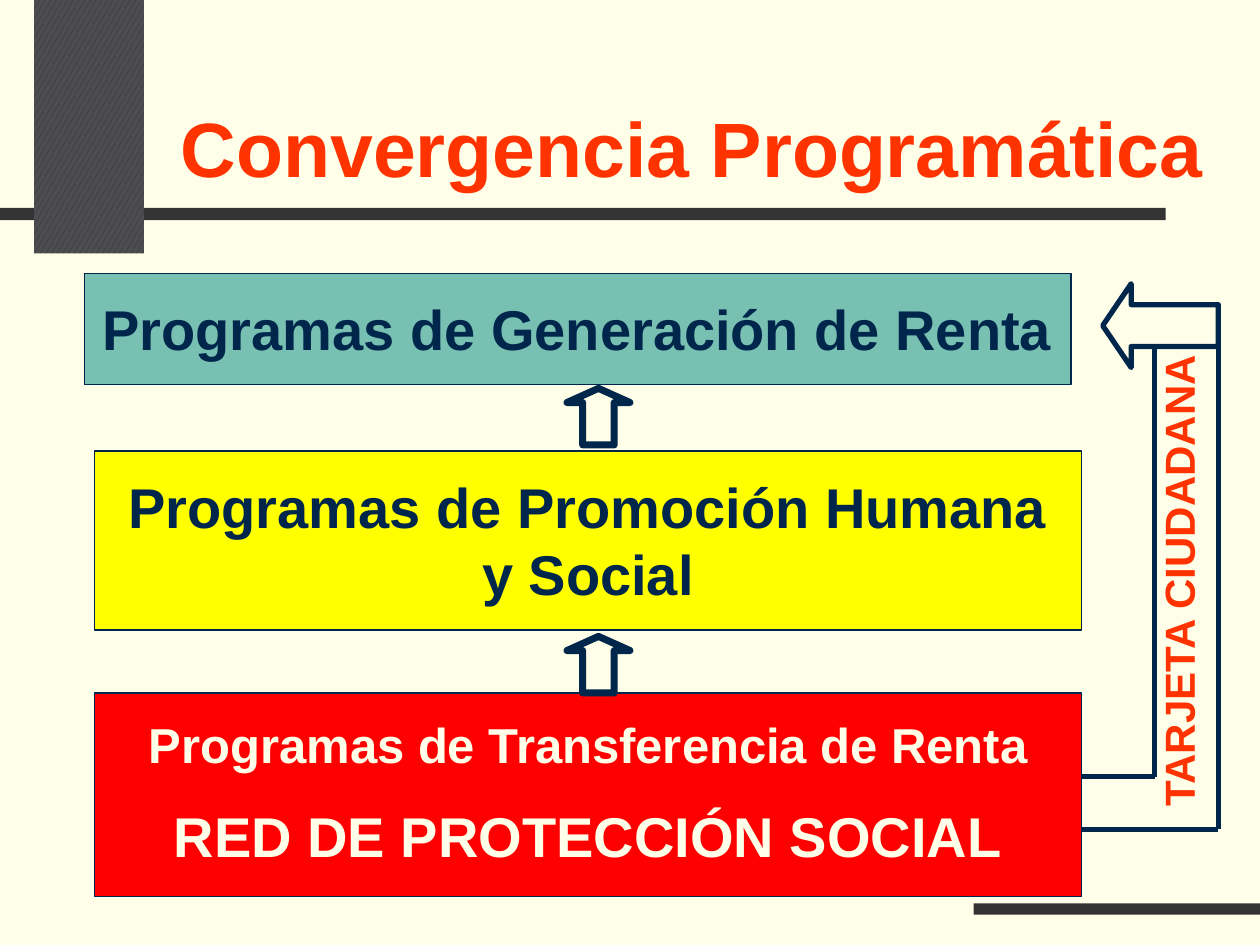
import pptx
import pptx.util
import pptx.dml.color
import pptx.enum.dml
import pptx.enum.shapes
import pptx.enum.text
import pptx.oxml

Cm = pptx.util.Cm
Pt = pptx.util.Pt
RGBColor = pptx.dml.color.RGBColor
SHAPE = pptx.enum.shapes.MSO_SHAPE
ANCHOR = pptx.enum.text.MSO_ANCHOR
CENTER = pptx.enum.text.PP_ALIGN.CENTER
LEFT = pptx.enum.text.PP_ALIGN.LEFT

CREAM = RGBColor(0xFF, 0xFF, 0xE9)
CHARCOAL = RGBColor(0x33, 0x33, 0x33)
GRAY = RGBColor(0x4D, 0x4D, 0x4D)
SLATE = RGBColor(0x26, 0x2D, 0x4C)
NAVY = RGBColor(0x00, 0x26, 0x4C)
ORANGE = RGBColor(0xFF, 0x33, 0x00)
TEAL = RGBColor(0x78, 0xC0, 0xB2)
YELLOW = RGBColor(0xFF, 0xFF, 0x00)
RED = RGBColor(0xFF, 0x00, 0x00)


class ProgramSlide:
    font_name = "Arial"

    def __init__(self, deck):
        self.slide = deck.slides.add_slide(deck.slide_layouts[5])
        self.shapes = self.slide.shapes
        background = self.slide.background.fill
        background.solid()
        background.fore_color.rgb = CREAM

    def set_lines(self, frame, lines, color, align=CENTER, anchor=ANCHOR.TOP):
        """Fill the frame with (text, size) lines, each one a paragraph."""
        frame.word_wrap = True
        frame.auto_size = pptx.enum.text.MSO_AUTO_SIZE.NONE
        frame.vertical_anchor = anchor
        for number, (text, size) in enumerate(lines):
            paragraph = frame.add_paragraph() if number else frame.paragraphs[0]
            paragraph.alignment = align
            if number:
                paragraph.space_before = Pt(size / 2)
            run = paragraph.add_run()
            run.text = text
            style = {"name": self.font_name, "size": Pt(size), "bold": True}
            for name, value in style.items():
                setattr(run.font, name, value)
            run.font.color.rgb = color

    def title(self, text, left, top, width, height):
        heading = self.shapes.title
        place = {"left": left, "top": top, "width": width, "height": height}
        for name, value in place.items():
            setattr(heading, name, Cm(value))
        self.set_lines(heading.text_frame, [(text, 44)], ORANGE,
                       anchor=ANCHOR.BOTTOM)

    def shape(self, kind, place, fill=None, line_width=0):
        shape = self.shapes.add_shape(kind, *map(Cm, place))
        shape.shadow.inherit = False
        if fill is None:
            shape.fill.background()
        else:
            shape.fill.solid()
            shape.fill.fore_color.rgb = fill
        if line_width:
            shape.line.color.rgb = NAVY
            shape.line.width = Pt(line_width)
        else:
            shape.line.fill.background()
        return shape

    def confetti_block(self, *place):
        fill = self.shape(SHAPE.RECTANGLE, place).fill
        fill.patterned()
        fill.pattern = pptx.enum.dml.MSO_PATTERN.LARGE_CONFETTI
        fill.fore_color.rgb = SLATE
        fill.back_color.rgb = GRAY

    def program(self, place, fill, color, lines):
        frame = self.shape(SHAPE.RECTANGLE, place, fill, 0.75).text_frame
        margins = {"margin_left": 0.36, "margin_right": 0.36,
                   "margin_top": 0.43, "margin_bottom": 0.43}
        for name, value in margins.items():
            setattr(frame, name, Cm(value))
        self.set_lines(frame, lines, color)

    def arrow(self, kind, place, line_width, head):
        arrow = self.shape(kind, place, line_width=line_width)
        arrow.adjustments[0] = 0.5
        arrow.adjustments[1] = head

    def line(self, *ends):
        line = self.shapes.add_connector(
            pptx.enum.shapes.MSO_CONNECTOR.STRAIGHT, *map(Cm, ends))
        line.line.color.rgb = NAVY
        line.line.width = Pt(3)
        properties = line._element.spPr
        properties.append(pptx.oxml.parse_xml(
            '<a:effectLst xmlns:a="http://schemas.openxmlformats.org/'
            'drawingml/2006/main"/>'))

    def upward_label(self, text, *place):
        label = self.shapes.add_textbox(*map(Cm, place))
        label.rotation = 270
        self.set_lines(label.text_frame, [(text, 24)], ORANGE, align=LEFT)


def main():
    deck = pptx.Presentation()
    deck.slide_width, deck.slide_height = Cm(25.4), Cm(19.05)
    page = ProgramSlide(deck)

    page.shape(SHAPE.RECTANGLE, (0, 4.19, 23.5, 0.25), CHARCOAL)
    page.confetti_block(0.69, 0, 2.21, 5.11)
    page.shape(SHAPE.RECTANGLE, (19.63, 18.21, 5.77, 0.23), CHARCOAL)
    page.title("Convergencia Programática", 3.38, 0.69, 21.16, 3.33)

    width = 19.89
    left = 1.91
    page.program((1.7, 5.51, width, 2.24), TEAL, NAVY,
                 [("Programas de Generación de Renta", 32)])
    page.program((left, 9.09, width, 3.61), YELLOW, NAVY,
                 [("Programas de Promoción Humana y Social", 32)])
    page.program((left, 13.97, width, 4.11), RED, CREAM,
                 [("Programas de Transferencia de Renta", 28),
                  ("RED DE PROTECCIÓN SOCIAL", 32)])

    for top in (7.83, 12.83):
        page.arrow(SHAPE.UP_ARROW, (11.43, top, 1.27, 1.14), 4, 0.25)
    page.arrow(SHAPE.LEFT_ARROW, (22.23, 5.72, 2.33, 1.69), 3, 0.34)

    channel_top = 6.99
    for x, bottom in ((24.56, 16.72), (23.28, 15.66)):
        page.line(x, channel_top, x, bottom)
        page.line(x, bottom, left + width, bottom)
    page.upward_label("TARJETA CIUDADANA", 17.83, 9.96, 11.84, 1.27)

    deck.save("out.pptx")


if __name__ == "__main__":
    main()
